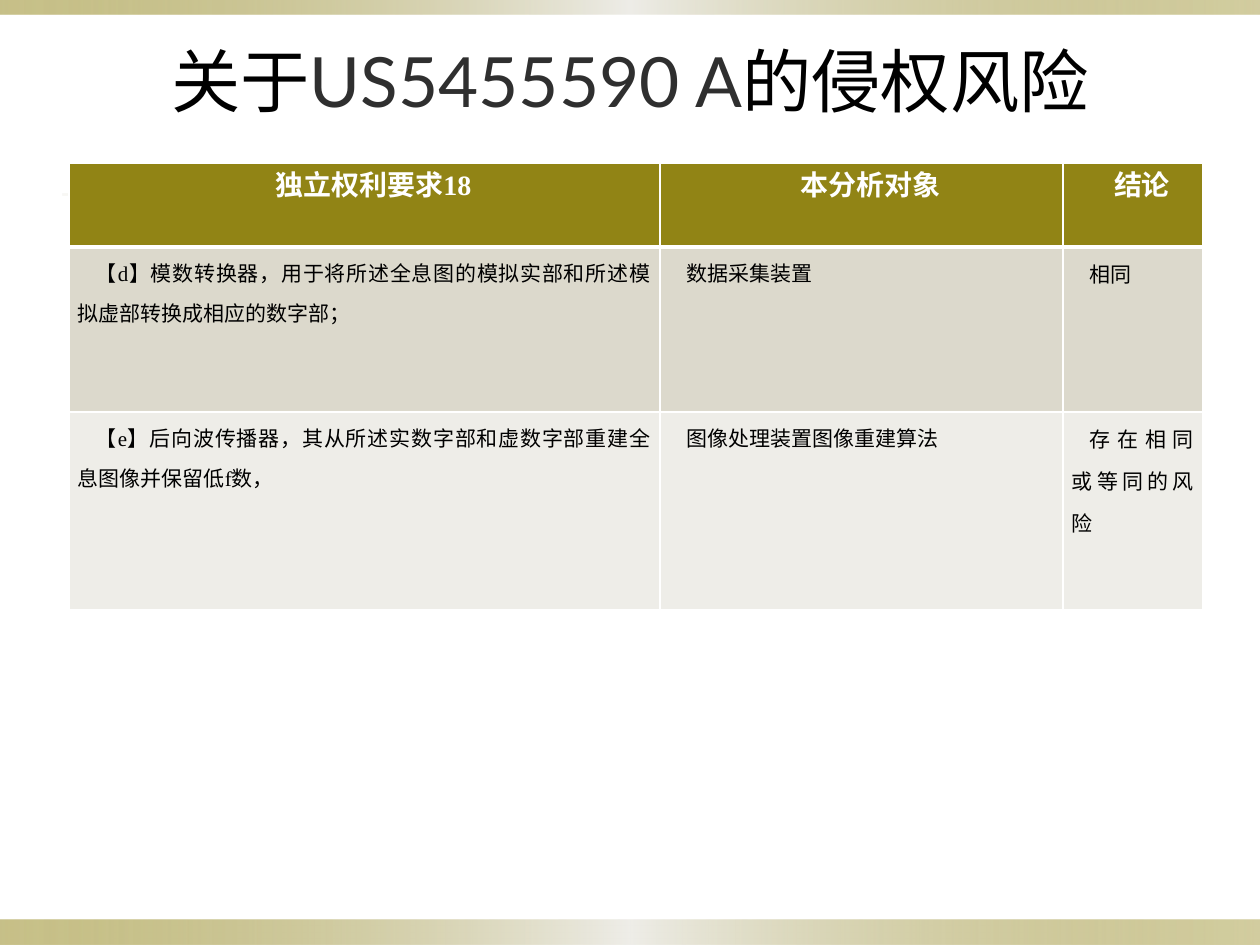
from lxml.etree import SubElement
from pptx import Presentation
from pptx.dml.color import RGBColor
from pptx.enum.shapes import MSO_SHAPE
from pptx.enum.text import MSO_ANCHOR, PP_ALIGN
from pptx.oxml.ns import qn
from pptx.util import Emu, Pt

PX = 914400 / 126
OLIVE = RGBColor(0x91, 0x84, 0x15)
SAND = RGBColor(0xDC, 0xD9, 0xCC)
PALE = RGBColor(0xEE, 0xED, 0xE8)
WHITE = RGBColor(0xFF, 0xFF, 0xFF)
BLACK = RGBColor(0x00, 0x00, 0x00)
GRAPHITE = RGBColor(0x2F, 0x2F, 0x2F)
SERIF = "Times New Roman"
SANS = "Lato"

BAR_STOPS = [(0, OLIVE, 50), (50, PALE, 100), (100, OLIVE, 40)]
RULE_STOPS = [(0, SAND, 20), (50, OLIVE, 40), (100, SAND, 50)]
COLUMN_WIDTHS = [591, 403, 140]
ROW_HEIGHTS = [84, 165, 198]
ROW_FILLS = [OLIVE, SAND, PALE]
CLAIM_ROWS = [
    ["独立权利要求18", "本分析对象", "结论"],
    ["【d】模数转换器，用于将所述全息图的模拟实部和所述模拟虚部转换成相应的数字部；",
     "数据采集装置", "相同"],
    ["【e】后向波传播器，其从所述实数字部和虚数字部重建全息图像并保留低f数，",
     "图像处理装置图像重建算法", "存在相同或等同的风险"],
]


def px(length):
    """Turn pixels into EMU."""
    return Emu(round(length * PX))


def style_run(run, size, font, color, bold=False):
    """Set the look of one run."""
    run.font.size = Pt(size)
    run.font.name = font
    run.font.color.rgb = color
    run.font.bold = bold


def add_gradient_band(slide, box, stops):
    """Draw a horizontal band shaded through translucent stops."""
    band = slide.shapes.add_shape(MSO_SHAPE.RECTANGLE, *map(px, box))
    band.shadow.inherit = False
    band.line.fill.background()
    band.fill.gradient()
    band.fill.gradient_angle = 0
    stop_list = band._element.spPr.find(qn("a:gradFill")).find(qn("a:gsLst"))
    for default_stop in list(stop_list):
        stop_list.remove(default_stop)
    for position, color, opacity in stops:
        stop = SubElement(stop_list, qn("a:gs"), pos=str(position * 1000))
        shade = SubElement(stop, qn("a:srgbClr"), val=str(color))
        SubElement(shade, qn("a:alpha"), val=str(opacity * 1000))


def add_title(slide, box):
    """Write the centred title at the top of its box."""
    title = slide.shapes.add_textbox(*map(px, box))
    frame = title.text_frame
    frame.word_wrap = True
    frame.vertical_anchor = MSO_ANCHOR.TOP
    frame.margin_top = frame.margin_bottom = 0
    heading = frame.paragraphs[0]
    heading.alignment = PP_ALIGN.CENTER
    for wording, font, color in [("关于", SERIF, BLACK),
                                 ("US5455590 A", SANS, GRAPHITE),
                                 ("的侵权风险", SERIF, BLACK)]:
        run = heading.add_run()
        run.text = wording
        style_run(run, 39.6, font, color)


def add_cell_borders(cell, bottom_width):
    """Outline a cell in white, with its own bottom width."""
    properties = cell._tc.get_or_add_tcPr()
    for side, width in [("L", 1), ("R", 1), ("T", 1), ("B", bottom_width)]:
        edge = SubElement(properties, qn(f"a:ln{side}"), w=str(Pt(width)))
        fill = SubElement(edge, qn("a:solidFill"))
        SubElement(fill, qn("a:srgbClr"), val=str(WHITE))


def fill_cell(cell, wording, color, is_header, spacing):
    """Write and format one cell of the claim table."""
    add_cell_borders(cell, 3 if is_header else 1)
    cell.fill.solid()
    cell.fill.fore_color.rgb = color
    cell.margin_left = cell.margin_right = px(9)
    cell.margin_top = cell.margin_bottom = 0
    paragraph = cell.text_frame.paragraphs[0]
    paragraph.text = wording
    paragraph.alignment = PP_ALIGN.CENTER if is_header else PP_ALIGN.JUSTIFY
    paragraph.line_spacing = Pt(spacing)
    paragraph._p.get_or_add_pPr().set("indent", str(px(18)))
    style_run(paragraph.runs[0], 16 if is_header else 12, SERIF,
              WHITE if is_header else BLACK, is_header)


def add_claim_table(slide, left, top):
    """Build the table comparing the claim with the analysed object."""
    table = slide.shapes.add_table(
        len(ROW_HEIGHTS), len(COLUMN_WIDTHS), px(left), px(top),
        px(sum(COLUMN_WIDTHS)), px(sum(ROW_HEIGHTS))).table
    table.horz_banding = False
    for column, width in zip(table.columns, COLUMN_WIDTHS):
        column.width = px(width)
    for r, (row, height) in enumerate(zip(table.rows, ROW_HEIGHTS)):
        row.height = px(height)
        for c, wording in enumerate(CLAIM_ROWS[r]):
            spacing = 24 if r > 0 and c == 2 else 23
            fill_cell(table.cell(r, c), wording, ROW_FILLS[r], r == 0, spacing)


def main():
    """Assemble and save the slide."""
    presentation = Presentation()
    presentation.slide_width, presentation.slide_height = px(1260), px(945)
    slide = presentation.slides.add_slide(presentation.slide_layouts[6])
    add_gradient_band(slide, (0, 920, 1260, 25), BAR_STOPS)
    add_gradient_band(slide, (0, 0, 1260, 15), BAR_STOPS)
    add_gradient_band(slide, (63, 194, 1134, 2), RULE_STOPS)
    add_title(slide, (63, 38, 1134, 157))
    add_claim_table(slide, 69, 163)
    presentation.save("out.pptx")


if __name__ == "__main__":
    main()
